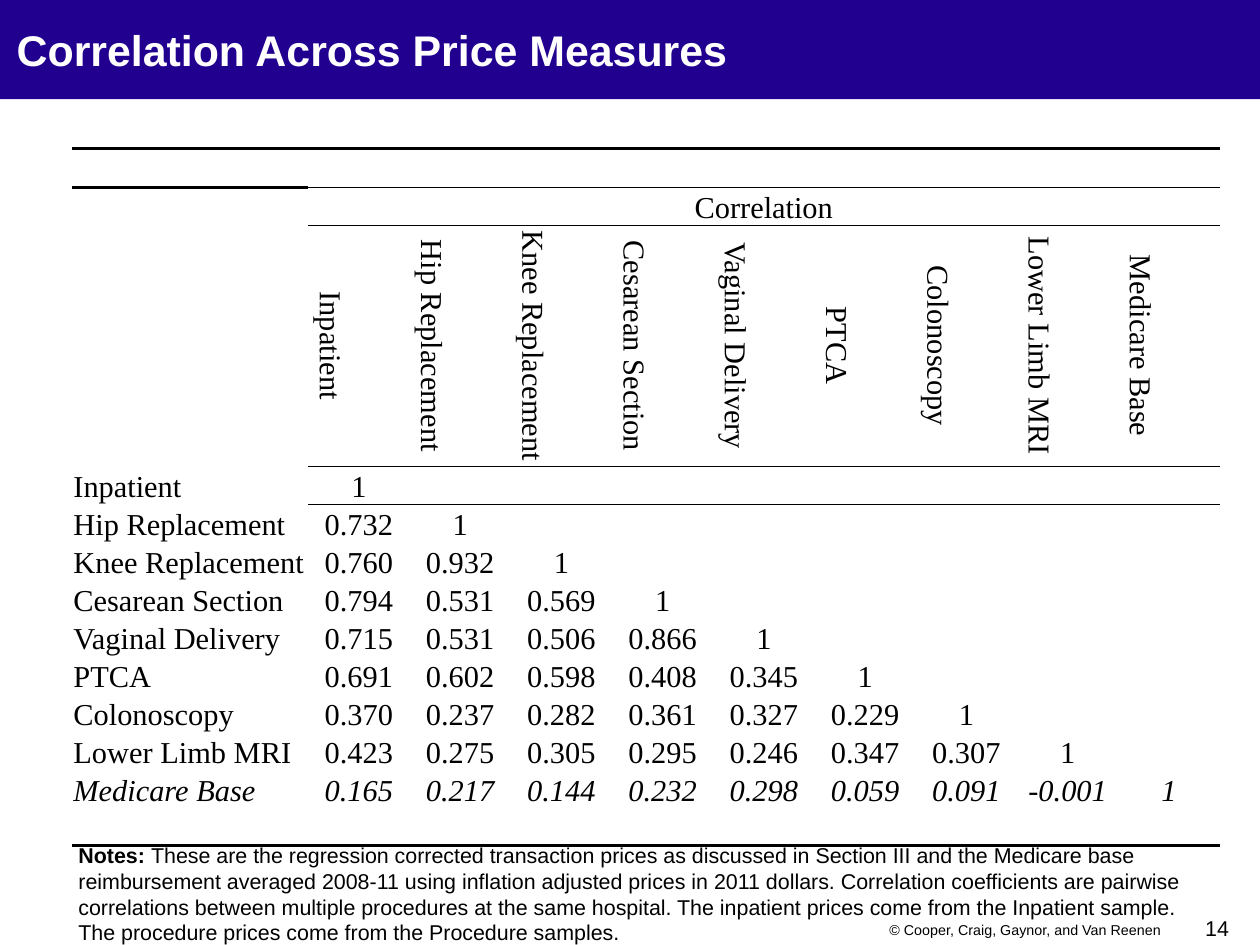
"""Build the slide showing the correlation table across price measures."""
from lxml import etree
from pptx import Presentation
from pptx.dml.color import RGBColor
from pptx.enum.shapes import MSO_SHAPE
from pptx.enum.text import MSO_ANCHOR, PP_ALIGN
from pptx.oxml import parse_xml
from pptx.oxml.ns import nsdecls, qn
from pptx.util import Cm, Pt

RECTANGLE = MSO_SHAPE.RECTANGLE
MIDDLE, BOTTOM, TOP = MSO_ANCHOR.MIDDLE, MSO_ANCHOR.BOTTOM, MSO_ANCHOR.TOP
LEFT, CENTER, RIGHT = PP_ALIGN.LEFT, PP_ALIGN.CENTER, PP_ALIGN.RIGHT

COLORS = {"band": "21008F", "title": "FFFFFF", "ink": "000000"}

TITLE = "Correlation Across Price Measures"
TABLE_HEADING = "Correlation"
CORRELATIONS = [
    ("Inpatient", ["1"]),
    ("Hip Replacement", ["0.732", "1"]),
    ("Knee Replacement", ["0.760", "0.932", "1"]),
    ("Cesarean Section", ["0.794", "0.531", "0.569", "1"]),
    ("Vaginal Delivery", ["0.715", "0.531", "0.506", "0.866", "1"]),
    ("PTCA", ["0.691", "0.602", "0.598", "0.408", "0.345", "1"]),
    ("Colonoscopy", ["0.370", "0.237", "0.282", "0.361", "0.327", "0.229", "1"]),
    ("Lower Limb MRI", ["0.423", "0.275", "0.305", "0.295", "0.246", "0.347",
                        "0.307", "1"]),
    ("Medicare Base", ["0.165", "0.217", "0.144", "0.232", "0.298", "0.059",
                       "0.091", "-0.001", "1"]),
]
ITALIC_MEASURE = "Medicare Base"
NOTES_LABEL = "Notes: "
NOTES = (
    "These are the regression corrected transaction prices as discussed in "
    "Section III and the Medicare base reimbursement averaged 2008-11 using "
    "inflation adjusted prices in 2011 dollars. Correlation coefficients are "
    "pairwise correlations between multiple procedures at the same hospital. "
    "The inpatient prices come from the Inpatient sample. The procedure prices "
    "come from the Procedure samples."
)
CREDIT = "© Cooper, Craig, Gaynor, and Van Reenen"
PAGE_NUMBER = "14"

SLIDE_WIDTH, SLIDE_HEIGHT = Cm(24.89), Cm(18.67)
BAND_HEIGHT = Cm(1.96)
TABLE_LEFT, TABLE_TOP = Cm(1.42), Cm(2.16)
LABEL_WIDTH, VALUE_WIDTH = Cm(4.67), Cm(2)
SPACER_HEIGHT, ROW_HEIGHT, NAMES_HEIGHT = Cm(0.77), Cm(0.74), Cm(4.6)
HEADING_ROW, NAMES_ROW, FIRST_ROW = 2, 3, 4
LAST_ROW = FIRST_ROW + len(CORRELATIONS)
RULES = [(0, 0, 2), (1, 1, 0.5), (NAMES_ROW, 1, 0.5), (LAST_ROW, 0, 2)]

NO_STYLE = "{2D5ABB26-0587-4C30-8999-92F81FD0307C}"
TABLE_FLAGS = {"first_row": False, "horz_banding": False}
CELL_FORMAT = {"margin_left": Cm(0.03), "margin_right": Cm(0.03),
               "margin_top": Cm(0.03), "margin_bottom": 0,
               "vertical_anchor": BOTTOM}
NAMES_FORMAT = {"margin_top": Cm(0.1), "margin_bottom": Cm(0.1),
                "vertical_anchor": MIDDLE}
TABLE_FONT = {"name": "Times New Roman", "size": Pt(17)}
NO_INSETS = {"margin_left": 0, "margin_right": 0, "margin_top": 0,
             "margin_bottom": 0}
PADDED = {"margin_left": Cm(0.25), "margin_right": Cm(0.25),
          "margin_top": Cm(0.13), "margin_bottom": Cm(0.13),
          "vertical_anchor": TOP}


def apply(target, values):
    for attribute, value in values.items():
        setattr(target, attribute, value)


def add_run(paragraph, text, font, color="ink"):
    run = paragraph.add_run()
    run.text = text
    apply(run.font, font)
    run.font.color.rgb = RGBColor.from_string(COLORS[color])


def add_text(slide, box, runs, frame_format, align=LEFT, color="ink"):
    frame = slide.shapes.add_textbox(*map(Cm, box)).text_frame
    apply(frame, frame_format)
    paragraph = frame.paragraphs[0]
    paragraph.alignment = align
    for text, size, bold in runs:
        font = {"name": "Arial", "size": Pt(size), "bold": bold}
        add_run(paragraph, text, font, color)


def fill_cell(cell, text, align=CENTER, italic=False):
    paragraph = cell.text_frame.paragraphs[0]
    paragraph.alignment = align
    add_run(paragraph, text, {**TABLE_FONT, "italic": italic})


def add_border(cell, side, points):
    line = parse_xml(
        f'<a:{side} {nsdecls("a")} w="{Pt(points)}"><a:solidFill>'
        f'<a:srgbClr val="{COLORS["ink"]}"/></a:solidFill></a:{side}>')
    cell._tc.get_or_add_tcPr().insert(0, line)


def add_correlation_table(slide):
    heights = [SPACER_HEIGHT] * 2 + [ROW_HEIGHT, NAMES_HEIGHT]
    heights += [ROW_HEIGHT] * (len(CORRELATIONS) + 1)
    widths = [LABEL_WIDTH] + [VALUE_WIDTH] * len(CORRELATIONS)
    table = slide.shapes.add_table(
        len(heights), len(widths), TABLE_LEFT, TABLE_TOP,
        sum(widths), sum(heights)).table
    apply(table, TABLE_FLAGS)
    table._tbl.tblPr.find(qn("a:tableStyleId")).text = NO_STYLE
    for row, height in zip(table.rows, heights):
        row.height = height
    for column, width in zip(table.columns, widths):
        column.width = width
    for cell in table.iter_cells():
        apply(cell, CELL_FORMAT)
        cell.fill.background()

    heading = table.cell(HEADING_ROW, 1)
    heading.merge(table.cell(HEADING_ROW, len(CORRELATIONS)))
    fill_cell(heading, TABLE_HEADING)
    for index, (measure, values) in enumerate(CORRELATIONS):
        name = table.cell(NAMES_ROW, index + 1)
        apply(name, NAMES_FORMAT)
        name._tc.get_or_add_tcPr().set("vert", "vert")
        fill_cell(name, measure)
        row, italic = FIRST_ROW + index, measure == ITALIC_MEASURE
        fill_cell(table.cell(row, 0), measure, LEFT, italic)
        for column, value in enumerate(values, 1):
            fill_cell(table.cell(row, column), value, CENTER, italic)

    for cell in table.iter_cells():
        if not cell.text_frame.text:
            paragraph = cell.text_frame.paragraphs[0]._p
            etree.SubElement(paragraph, qn("a:endParaRPr"), sz="1200")
    for row, first_column, points in reversed(RULES):
        for column in range(first_column, len(widths)):
            add_border(table.cell(row, column), "lnB", points)
            if row < LAST_ROW:
                add_border(table.cell(row + 1, column), "lnT", points)


def main():
    deck = Presentation()
    apply(deck, {"slide_width": SLIDE_WIDTH, "slide_height": SLIDE_HEIGHT})
    slide = deck.slides.add_slide(deck.slide_layouts[6])

    band = slide.shapes.add_shape(RECTANGLE, 0, 0, SLIDE_WIDTH, BAND_HEIGHT)
    band.shadow.inherit = False
    band.fill.solid()
    band.fill.fore_color.rgb = RGBColor.from_string(COLORS["band"])
    band.line.fill.background()

    add_text(slide, (1.3, 16.51, 22.99, 2.15),
             [(NOTES_LABEL, 12, True), (NOTES, 12, False)],
             {**PADDED, "word_wrap": True})
    add_text(slide, (0.33, 0.46, 23.95, 1.02), [(TITLE, 24, True)],
             {**NO_INSETS, "word_wrap": True, "vertical_anchor": MIDDLE},
             color="title")
    add_text(slide, (23.8, 18.08, 0.48, 0.51), [(PAGE_NUMBER, 12, False)],
             {**NO_INSETS, "word_wrap": False}, RIGHT)
    add_correlation_table(slide)
    add_text(slide, (17.32, 18.08, 5.92, 0.59), [(CREDIT, 8, False)],
             {**PADDED, "word_wrap": False})
    deck.save("out.pptx")


if __name__ == "__main__":
    main()
